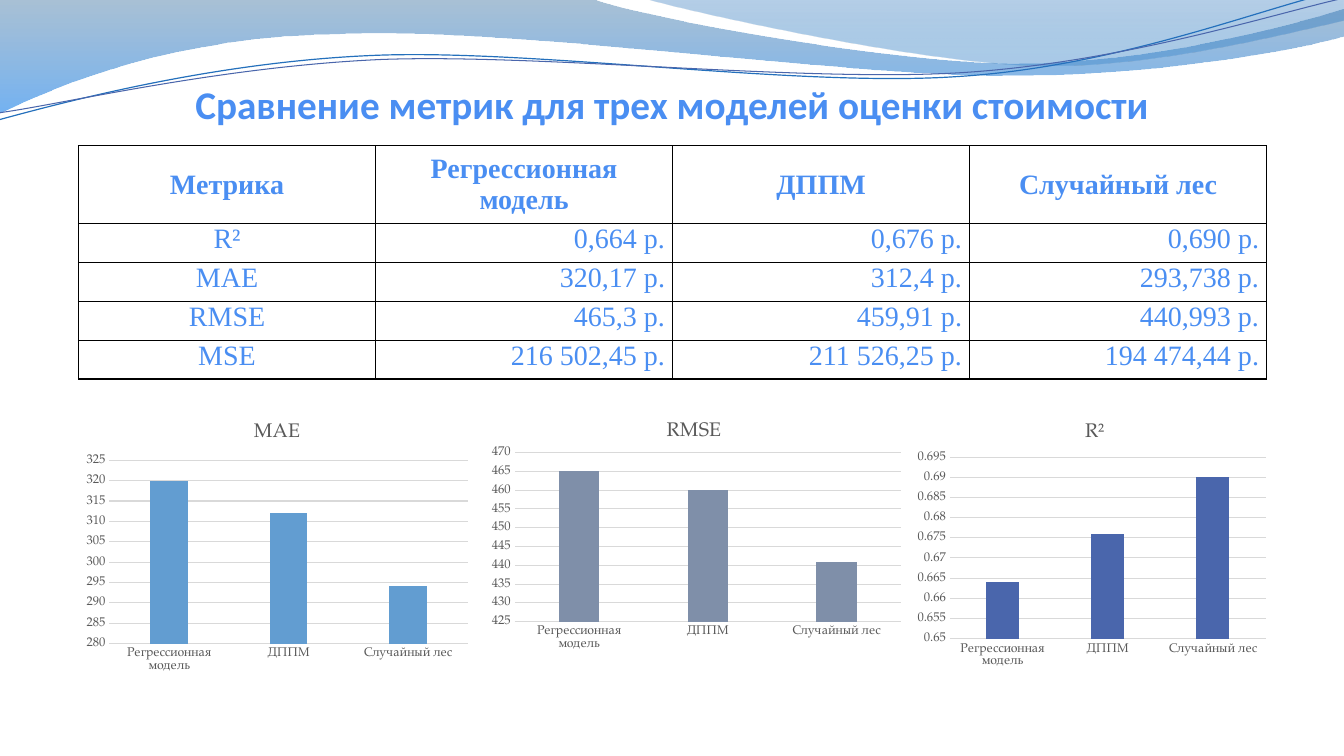
from lxml import etree
from pptx import Presentation
from pptx.chart.data import CategoryChartData
from pptx.dml.color import RGBColor
from pptx.enum.chart import XL_CHART_TYPE as ChartType, XL_TICK_MARK as TickMark
from pptx.enum.text import MSO_ANCHOR as Anchor, MSO_AUTO_SIZE as AutoSize, PP_ALIGN as Align
from pptx.oxml import parse_xml
from pptx.oxml.ns import nsdecls, qn
from pptx.util import Cm, Pt

BLUE, GREY, GRID = "4A8EF2", "595959", "D9D9D9"
CHART_FONT = "TeX Gyre Pagella"
MODELS = ["Регрессионная модель", "ДППМ", "Случайный лес"]
METRICS = [
    ["Метрика", *MODELS],
    ["R²", "0,664 р.", "0,676 р.", "0,690 р."],
    ["MAE", "320,17 р.", "312,4 р.", "293,738 р."],
    ["RMSE", "465,3 р.", "459,91 р.", "440,993 р."],
    ["MSE", "216 502,45 р.", "211 526,25 р.", "194 474,44 р."],
]
# title, values, colour, (minimum, maximum, step), width, height, inner plot area
CHARTS = [
    ("MAE", (320, 312, 294), "629DD1", (280, 325, 5), 10.01, 6.86, None),
    ("RMSE", (465, 460, 441), "7F8FA9", (425, 470, 5), 11, 6.17,
     (0.089, 0.191, 0.885, 0.69)),
    ("R²", (0.664, 0.676, 0.69), "4A66AC", (0.65, 0.695, 0.005), 9.2, 6.86,
     (0.103, 0.188, 0.865, 0.667)),
]
# Outlines in cm: a start point, then segments of one point (line) or three (curve)
BAND = [(0, 0), [(14.91, -0.03)],
        [(16.1, 0.43), (22.48, 1.6), (25.68, 1.6)],
        [(28.91, 1.6), (32.46, 0.66), (33.86, 0.23)], [(33.91, 0.91)],
        [(33.3, 1.12), (29.46, 1.93), (25.25, 1.91)],
        [(21.06, 1.91), (12.93, 0.71), (8.71, 0.86)],
        [(4.37, 0.91), (1.55, 2.11), (-0.03, 2.87)]]
VEIL = [(16.23, -0.03),
        [(17.25, 0.28), (23.09, 1.57), (26.04, 1.65)],
        [(28.98, 1.75), (32.56, 0.81), (33.86, 0.53)], [(33.86, 0)]]
UPPER_LINE = [(-0.03, 3.02),
              [(1.63, 2.57), (5.36, 1.57), (9.37, 1.4)],
              [(13.39, 1.22), (20.07, 2.21), (24.13, 1.93)],
              [(28.19, 1.68), (31.8, 0.2), (33.81, -0.25)]]
LOWER_LINE = [(0, 2.84),
              [(1.6, 2.62), (5.54, 1.68), (9.6, 1.5)],
              [(13.64, 1.35), (20.22, 2.08), (24.26, 1.83)],
              [(28.32, 1.57), (32.05, 0.36), (33.88, -0.05)]]


def color(value):
    return RGBColor.from_string(value)


def style_font(font, name, size, value, bold=False):
    font.name, font.size, font.bold = name, Pt(size), bold
    font.color.rgb = color(value)


def add_curve(slide, outline, close):
    """Draw an outline, turning each three-point segment into a Bézier curve."""
    start, *segments = outline
    points = [(Cm(x), Cm(y)) for part in segments for x, y in part]
    builder = slide.shapes.build_freeform(Cm(start[0]), Cm(start[1]))
    builder.add_line_segments(points, close=close)
    shape = builder.convert_to_shape()
    shape.shadow.inherit = False
    lines = iter(list(shape.element.iter(qn("a:lnTo"))))
    for part in segments:
        steps = [next(lines) for _ in part]
        if len(part) == 3:
            curve = etree.Element(qn("a:cubicBezTo"))
            steps[0].addprevious(curve)
            for step in steps:
                curve.append(step[0])
                step.getparent().remove(step)
    return shape


def add_gradient_wave(slide, outline, stops):
    shape = add_curve(slide, outline, close=True)
    shape.line.fill.background()
    shape.fill.gradient()
    shape.fill.gradient_angle = 270
    for stop, (position, value, _) in zip(shape.fill.gradient_stops, stops):
        stop.position = position
        stop.color.rgb = color(value)
    for rgb, (_, _, opacity) in zip(shape.element.spPr.iter(qn("a:srgbClr")), stops):
        etree.SubElement(rgb, qn("a:alpha"), val=str(opacity * 1000))


def add_waves(slide):
    add_gradient_wave(slide, BAND, [(0, "4075A3", 45), (1, "0073E7", 55)])
    add_gradient_wave(slide, VEIL, [(0, "0B5EB1", 30), (0.8, "438CCC", 45)])
    for outline, value, width in ((UPPER_LINE, "2470BC", 0.85), (LOWER_LINE, "4A66AC", 0.75)):
        shape = add_curve(slide, outline, close=False)
        shape.fill.background()
        shape.line.color.rgb = color(value)
        shape.line.width = Pt(width)


def place_title(slide, left, top, width, height):
    title = slide.shapes.title
    title.left, title.top, title.width, title.height = left, top, width, height
    frame = title.text_frame
    frame.text = "Сравнение метрик для трех моделей оценки стоимости"
    frame.auto_size = AutoSize.NONE
    frame.vertical_anchor = Anchor.BOTTOM
    frame.margin_left = frame.margin_right = frame.margin_bottom = 0
    frame.margin_top = Cm(0.13)
    paragraph = frame.paragraphs[0]
    paragraph.alignment = Align.CENTER
    style_font(paragraph.font, "Calibri", 28, BLUE, bold=True)
    slide.shapes.element.append(title.element)  # in front of the waves


def add_borders(cell):
    for position, side in enumerate(("lnL", "lnR", "lnT", "lnB")):
        cell._tc.get_or_add_tcPr().insert(position, parse_xml(
            f'<a:{side} {nsdecls("a")} w="12700"><a:solidFill>'
            f'<a:srgbClr val="000000"/></a:solidFill></a:{side}>'))


def add_metrics_table(slide, left, top, width, header_height, row_height):
    rows, columns = len(METRICS), len(METRICS[0])
    height = header_height + row_height * (rows - 1)
    table = slide.shapes.add_table(rows, columns, left, top, width, height).table
    table.first_row = table.horz_banding = False
    for row, texts in enumerate(METRICS):
        table.rows[row].height = row_height if row else header_height
        for column, text in enumerate(texts):
            cell = table.cell(row, column)
            cell.text = text
            cell.fill.background()
            cell.margin_left = cell.margin_right = Cm(0.19)
            cell.margin_top = cell.margin_bottom = 0
            cell.vertical_anchor = Anchor.TOP if row else Anchor.MIDDLE
            paragraph = cell.text_frame.paragraphs[0]
            paragraph.alignment = Align.RIGHT if row and column else Align.CENTER
            style_font(paragraph.font, "Times New Roman", 20, BLUE, bold=row == 0)
            add_borders(cell)


def set_plot_area(chart, area):
    plot_area = chart.element.find(".//" + qn("c:plotArea"))
    for layout in plot_area.findall(qn("c:layout")):
        plot_area.remove(layout)
    settings = [("layoutTarget", "inner"), ("xMode", "edge"), ("yMode", "edge"),
                *zip("xywh", area)]
    items = "".join(f'<c:{name} val="{value}"/>' for name, value in settings)
    plot_area.insert(0, parse_xml(
        f'<c:layout {nsdecls("c")}><c:manualLayout>{items}</c:manualLayout></c:layout>'))


def add_metric_chart(slide, box, name, values, fill, scale, area):
    data = CategoryChartData()
    data.categories = MODELS
    data.add_series(name, values)
    chart = slide.shapes.add_chart(ChartType.COLUMN_CLUSTERED, *box, data).chart
    style_font(chart.font, CHART_FONT, 10, "000000")
    chart.has_legend = False
    chart.has_title = True
    chart.chart_title.include_in_layout = False
    chart.chart_title.text_frame.text = name
    style_font(chart.chart_title.text_frame.paragraphs[0].font, CHART_FONT, 14, GREY)

    plot = chart.plots[0]
    plot.gap_width, plot.overlap, plot.vary_by_categories = 219, -27, False
    series = plot.series[0]
    series.invert_if_negative = False
    series.format.fill.solid()
    series.format.fill.fore_color.rgb = color(fill)

    value_axis = chart.value_axis
    for axis in (chart.category_axis, value_axis):
        axis.major_tick_mark = axis.minor_tick_mark = TickMark.NONE
        style_font(axis.tick_labels.font, CHART_FONT, 9, GREY)
    value_axis.minimum_scale, value_axis.maximum_scale, value_axis.major_unit = scale
    value_axis.format.line.fill.background()
    for line in (chart.category_axis.format.line, value_axis.major_gridlines.format.line):
        line.color.rgb = color(GRID)
        line.width = Pt(0.75)
    if area:
        set_plot_area(chart, area)


def add_chart_row(slide, left, top):
    for name, values, fill, scale, width, height, area in CHARTS:
        box = (left, top, Cm(width), Cm(height))
        add_metric_chart(slide, box, name, values, fill, scale, area)
        left += Cm(width)


def main():
    presentation = Presentation()
    presentation.slide_width, presentation.slide_height = Cm(33.87), Cm(19.05)
    slide = presentation.slides.add_slide(presentation.slide_layouts[5])
    add_waves(slide)
    place_title(slide, Cm(1.69), Cm(1.96), Cm(30.48), Cm(1.24))
    add_metrics_table(slide, Cm(1.98), Cm(3.67), Cm(29.94), Cm(1.96), Cm(0.98))
    add_chart_row(slide, Cm(1.98), Cm(10.23))
    presentation.save("out.pptx")


if __name__ == "__main__":
    main()
